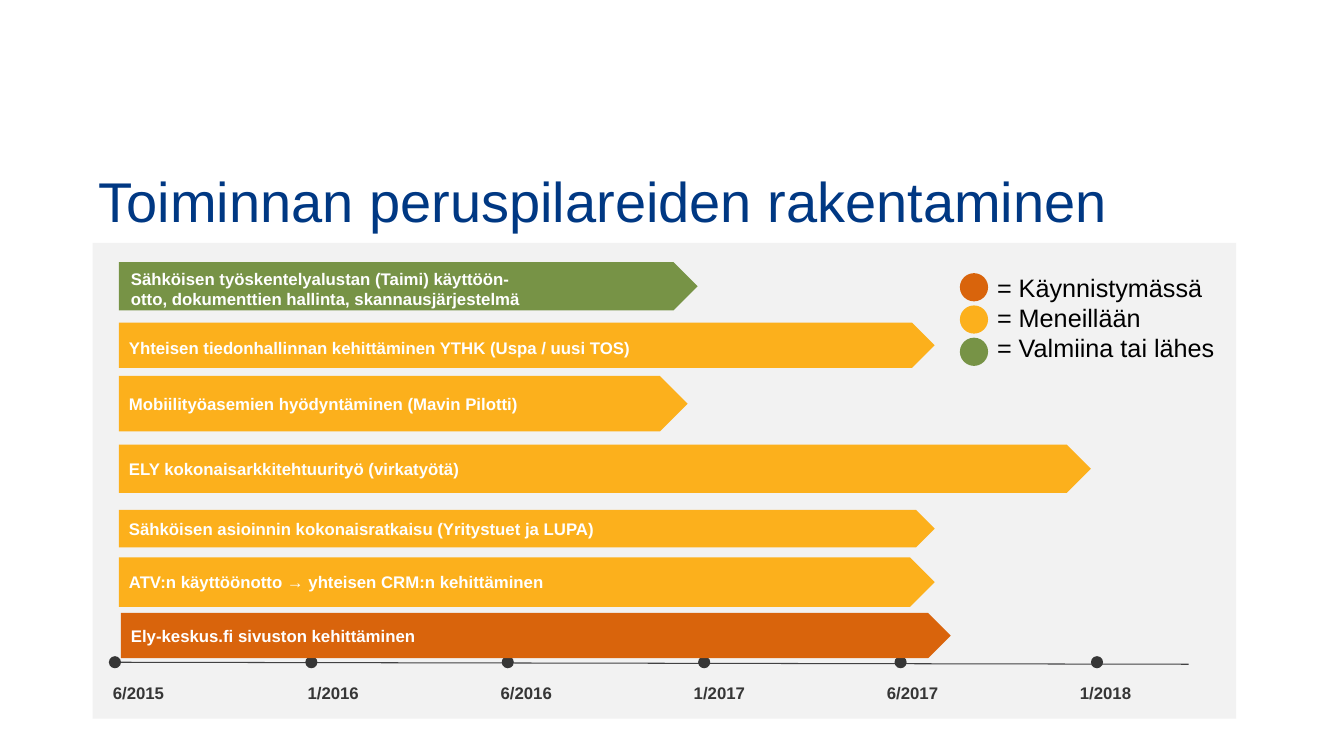
from dataclasses import dataclass

from lxml.etree import SubElement
from pptx import Presentation
from pptx.dml.color import RGBColor
from pptx.enum.shapes import MSO_CONNECTOR, MSO_SHAPE
from pptx.enum.text import MSO_ANCHOR as Anchor, PP_ALIGN as Align
from pptx.oxml.ns import qn
from pptx.shapes.autoshape import Shape
from pptx.slide import Slide
from pptx.text.text import TextFrame
from pptx.util import Inches, Pt

FONT = "Arial"
GREEN, YELLOW, ORANGE = "779346", "FCB01C", "D9640C"
PANEL, DARK, LINE = "F2F2F2", "363636", "424243"
WHITE, BLACK, BLUE = "FFFFFF", "000000", "003883"


@dataclass
class Project:
    """One arrow bar of the roadmap."""
    text: str
    top: float
    width: float
    height: float
    color: str = YELLOW
    left: float = 1.18
    inset_top: float = 0.05


@dataclass
class LegendItem:
    text: str
    color: str


PROJECTS = [
    Project("", 2.6, 5.74, 0.48, GREEN),
    Project("Yhteisen tiedonhallinnan kehittäminen YTHK (Uspa / uusi TOS)",
            3.2, 8.09, 0.45, inset_top=0.1),
    Project("Mobiilityöasemien hyödyntäminen (Mavin Pilotti)", 3.73, 5.64, 0.55),
    Project("ELY kokonaisarkkitehtuurityö (virkatyötä)", 4.41, 9.64, 0.48),
    Project("Sähköisen asioinnin kokonaisratkaisu (Yritystuet ja LUPA)", 5.06, 8.09, 0.37),
    Project("ATV:n käyttöönotto → yhteisen CRM:n kehittäminen", 5.53, 8.09, 0.49),
    Project("Ely-keskus.fi sivuston kehittäminen", 6.08, 8.23, 0.45, ORANGE, left=1.2),
]
LEGEND = [
    LegendItem("= Käynnistymässä", ORANGE),
    LegendItem("= Meneillään", YELLOW),
    LegendItem("= Valmiina tai lähes", GREEN),
]
DATES = ["6/2015", "1/2016", "6/2016", "1/2017", "6/2017", "1/2018"]


def rgb(color: str) -> RGBColor:
    return RGBColor.from_string(color)


def write(frame: TextFrame, paragraphs: list[str], size: float, color: str,
          bold: bool = False, align: Align = Align.LEFT) -> None:
    """Write one paragraph per item; a newline inside an item is a line break."""
    for index, text in enumerate(paragraphs):
        paragraph = frame.paragraphs[0] if index == 0 else frame.add_paragraph()
        paragraph.alignment = align
        for number, line in enumerate(text.split("\n")):
            if number:
                paragraph.add_line_break()
            run = paragraph.add_run()
            run.text = line
            run.font.name = FONT
            run.font.size = Pt(size)
            run.font.bold = bold
            run.font.color.rgb = rgb(color)


def add_filled(slide: Slide, kind: MSO_SHAPE, left: float, top: float,
               width: float, height: float, color: str) -> Shape:
    shape = slide.shapes.add_shape(kind, Inches(left), Inches(top), Inches(width), Inches(height))
    shape.shadow.inherit = False
    shape.fill.solid()
    shape.fill.fore_color.rgb = rgb(color)
    shape.line.fill.background()
    return shape


def add_text_box(slide: Slide, left: float, top: float, width: float,
                 height: float, wrap: bool = True) -> TextFrame:
    box = slide.shapes.add_textbox(Inches(left), Inches(top), Inches(width), Inches(height))
    box.text_frame.word_wrap = wrap
    return box.text_frame


def add_timeline(slide: Slide) -> None:
    axis = slide.shapes.add_connector(MSO_CONNECTOR.STRAIGHT, Inches(1.08), Inches(6.57),
                                      Inches(11.79), Inches(6.59))
    axis.line.color.rgb = rgb(LINE)
    axis.line.width = Pt(0.75)
    SubElement(axis._element.spPr, qn("a:effectLst"))

    for index, date in enumerate(DATES):
        add_filled(slide, MSO_SHAPE.OVAL, 1.08 + 1.948 * index, 6.51, 0.12, 0.12, DARK)
        # The first date starts at the axis; the others are centred on an even pitch
        if index == 0:
            left, width, align = 1.02, 1.02, Align.LEFT
        else:
            left, width, align = 2.56 + 1.915 * (index - 1), 1.49, Align.CENTER
        frame = add_text_box(slide, left, 6.72, width, 0.3)
        write(frame, [date], 12, DARK, bold=True, align=align)


def add_project(slide: Slide, project: Project) -> None:
    bar = add_filled(slide, MSO_SHAPE.PENTAGON, project.left, project.top,
                     project.width, project.height, project.color)
    if project.text:
        frame = bar.text_frame
        frame.word_wrap = True
        frame.vertical_anchor = Anchor.MIDDLE
        frame.margin_top = Inches(project.inset_top)
        write(frame, [project.text], 12, WHITE, bold=True)


def add_legend(slide: Slide) -> None:
    for index, item in enumerate(LEGEND):
        add_filled(slide, MSO_SHAPE.OVAL, 9.52, 2.71 + 0.32 * index, 0.28, 0.28, item.color)
    frame = add_text_box(slide, 9.79, 2.65, 2.38, 1.01, wrap=False)
    write(frame, [item.text for item in LEGEND], 18, BLACK)


def main() -> None:
    presentation = Presentation()
    presentation.slide_width = Inches(13.33)
    presentation.slide_height = Inches(7.5)
    slide = presentation.slides.add_slide(presentation.slide_layouts[6])

    # Title
    title = add_text_box(slide, 0.88, 1.62, 11.42, 0.7)
    title.vertical_anchor = Anchor.BOTTOM
    title.margin_bottom = 0
    write(title, ["Toiminnan peruspilareiden rakentaminen"], 40, BLUE)

    # Panel and timeline
    add_filled(slide, MSO_SHAPE.RECTANGLE, 0.92, 2.41, 11.34, 4.72, PANEL)
    add_timeline(slide)

    # Project bars, with the two-line text laid over the first one
    for project in PROJECTS:
        add_project(slide, project)
    platform = add_text_box(slide, 1.2, 2.62, 6.26, 0.47)
    write(platform, ["Sähköisen työskentelyalustan (Taimi) käyttöön-\n"
                     "otto, dokumenttien hallinta, skannausjärjestelmä"], 12, WHITE, bold=True)

    # Legend
    add_legend(slide)
    presentation.save("out.pptx")


if __name__ == "__main__":
    main()
